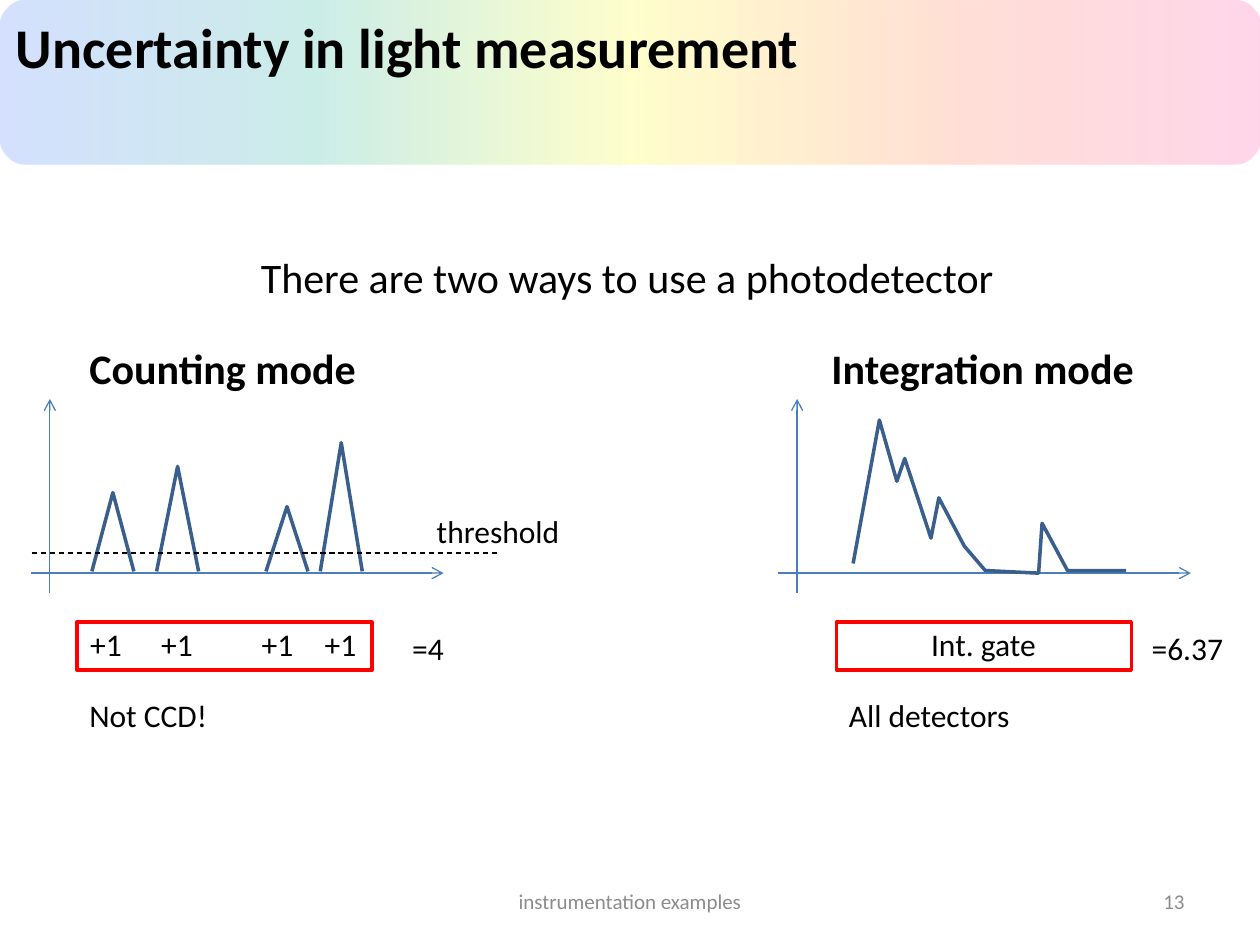
from lxml.etree import SubElement
from pptx import Presentation
from pptx.dml.color import RGBColor
from pptx.enum.dml import MSO_LINE
from pptx.enum.shapes import MSO_CONNECTOR, MSO_SHAPE
from pptx.enum.text import MSO_ANCHOR, MSO_AUTO_SIZE, PP_ALIGN
from pptx.oxml.ns import qn
from pptx.util import Pt

BLACK, GRAY, RED = "000000", "8C8C8C", "FF0000"
AXIS_BLUE, SIGNAL_BLUE = "4B7EBC", "3A5F8C"

RAINBOW = [(0, "FF3399"), (25, "FF6633"), (50, "FFFF00"), (75, "01A78F"), (100, "3366FF")]
BANNER_OPACITY = 20

# text, (left, top, width, height), format
HEADINGS = [
    ("Uncertainty in light measurement", (2, 3.5, 466, 46), dict(size=32, bold=True)),
    ("There are two ways to use a photodetector", (142, 140, 437, 36), dict(size=24)),
    ("Counting mode", (44, 192, 168.5, 36), dict(size=24, bold=True)),
    ("Integration mode", (468, 192, 189.5, 36), dict(size=24, bold=True)),
]
FOOTERS = [
    ("instrumentation examples", (246, 500.5, 228, 29), PP_ALIGN.CENTER),
    ("13", (516, 500.5, 168, 29), PP_ALIGN.RIGHT),
]
# text, left, top, width
LABELS = [
    ("threshold", 242.5, 289, 86),
    ("=4", 228.5, 356, 33),
    ("=6.37", 651, 356, 56),
    ("Int. gate", 525, 353.5, 75),
    ("Not CCD!", 44, 394, 83),
    ("All detectors", 478, 394, 107),
] + [("+1", left, 353.5, 33) for left in (44.5, 85, 142.5, 178.5)]
LABEL_HEIGHT = 29

# left end of the time axis, left edge of the result box
PANELS = [(17.5, 44), (444.5, 478)]
AXIS_Y, AXIS_LENGTH, SIGNAL_AXIS_INSET = 327.5, 236, 11
SIGNAL_AXIS_BOTTOM, SIGNAL_AXIS_TOP = 339, 228
RESULT_TOP, RESULT_WIDTH, RESULT_HEIGHT = 355.5, 168.5, 27.5

# left foot, height of the peak
PULSES = [(52.5, 281.5), (89.5, 266.5), (152, 289.5), (183, 253)]
PULSE_WIDTH, PULSE_BASE = 24, 326.5
INTEGRATED_SIGNAL = [
    (487.5, 322), (502.5, 240), (512.5, 275), (517, 262), (532, 307.5), (536.5, 284.5),
    (551, 312), (563, 326), (593.5, 327.5), (595.5, 299), (610, 326), (643.5, 326),
]


def color(value):
    return RGBColor.from_string(value)


def set_line(shape, value, width):
    shape.line.color.rgb = color(value)
    shape.line.width = Pt(width)


def add_text(slide, text, box, size=18, bold=False, value=BLACK, align=PP_ALIGN.LEFT,
             anchor=MSO_ANCHOR.TOP, wrap=False):
    frame = slide.shapes.add_textbox(*map(Pt, box)).text_frame
    frame.word_wrap = wrap
    frame.auto_size = MSO_AUTO_SIZE.NONE if wrap else MSO_AUTO_SIZE.SHAPE_TO_FIT_TEXT
    frame.vertical_anchor = anchor
    paragraph = frame.paragraphs[0]
    paragraph.alignment = align
    run = paragraph.add_run()
    run.text = text
    run.font.name = "Calibri"
    run.font.size = Pt(size)
    run.font.bold = bold
    run.font.color.rgb = color(value)


def add_line(slide, start, end, value, arrow=False):
    line = slide.shapes.add_connector(MSO_CONNECTOR.STRAIGHT, *map(Pt, start + end))
    set_line(line, value, 0.75)
    if arrow:
        SubElement(line.line._get_or_add_ln(), qn("a:tailEnd"), type="arrow")
    SubElement(line._element.spPr, qn("a:effectLst"))
    return line


def add_signal(slide, points):
    (first_x, first_y), *rest = points
    builder = slide.shapes.build_freeform(Pt(first_x), Pt(first_y))
    builder.add_line_segments([(Pt(x), Pt(y)) for x, y in rest], close=False)
    signal = builder.convert_to_shape()
    signal.shadow.inherit = False
    signal.fill.background()
    set_line(signal, SIGNAL_BLUE, 2)


def add_banner(slide):
    banner = slide.shapes.add_shape(MSO_SHAPE.ROUNDED_RECTANGLE, 0, 0, Pt(720), Pt(94))
    banner.shadow.inherit = False
    banner.line.fill.background()
    banner.fill.gradient()
    gradient = banner._element.spPr.find(qn("a:gradFill"))
    stops = gradient.find(qn("a:gsLst"))
    for stop in list(stops):
        stops.remove(stop)
    for position, value in RAINBOW:
        stop = SubElement(stops, qn("a:gs"), pos=str(position * 1000))
        stop_color = SubElement(stop, qn("a:srgbClr"), val=value)
        SubElement(stop_color, qn("a:alpha"), val=str(BANNER_OPACITY * 1000))
    gradient.find(qn("a:lin")).set("ang", str(180 * 60000))


def add_panel(slide, axis_left, result_left):
    """Draw the two axes and the red result box of one detector mode."""
    add_line(slide, (axis_left, AXIS_Y), (axis_left + AXIS_LENGTH, AXIS_Y), AXIS_BLUE, arrow=True)
    signal_axis = axis_left + SIGNAL_AXIS_INSET
    add_line(slide, (signal_axis, SIGNAL_AXIS_BOTTOM), (signal_axis, SIGNAL_AXIS_TOP),
             AXIS_BLUE, arrow=True)
    box = (result_left, RESULT_TOP, RESULT_WIDTH, RESULT_HEIGHT)
    result = slide.shapes.add_shape(MSO_SHAPE.RECTANGLE, *map(Pt, box))
    result.shadow.inherit = False
    result.fill.background()
    set_line(result, RED, 2)


def main():
    presentation = Presentation()
    presentation.slide_width, presentation.slide_height = Pt(720), Pt(540)
    slide = presentation.slides.add_slide(presentation.slide_layouts[6])

    add_banner(slide)
    for text, box, text_format in HEADINGS:
        add_text(slide, text, box, **text_format)
    for text, box, align in FOOTERS:
        add_text(slide, text, box, size=12, value=GRAY, align=align,
                 anchor=MSO_ANCHOR.MIDDLE, wrap=True)

    for axis_left, result_left in PANELS:
        add_panel(slide, axis_left, result_left)
    for left, peak in PULSES:
        add_signal(slide, [(left, PULSE_BASE), (left + PULSE_WIDTH / 2, peak),
                           (left + PULSE_WIDTH, PULSE_BASE)])
    add_signal(slide, INTEGRATED_SIGNAL)
    threshold = add_line(slide, (18, 316), (285, 316), BLACK)
    threshold.line.dash_style = MSO_LINE.DASH

    for text, left, top, width in LABELS:
        add_text(slide, text, (left, top, width, LABEL_HEIGHT))
    presentation.save("out.pptx")


if __name__ == "__main__":
    main()
